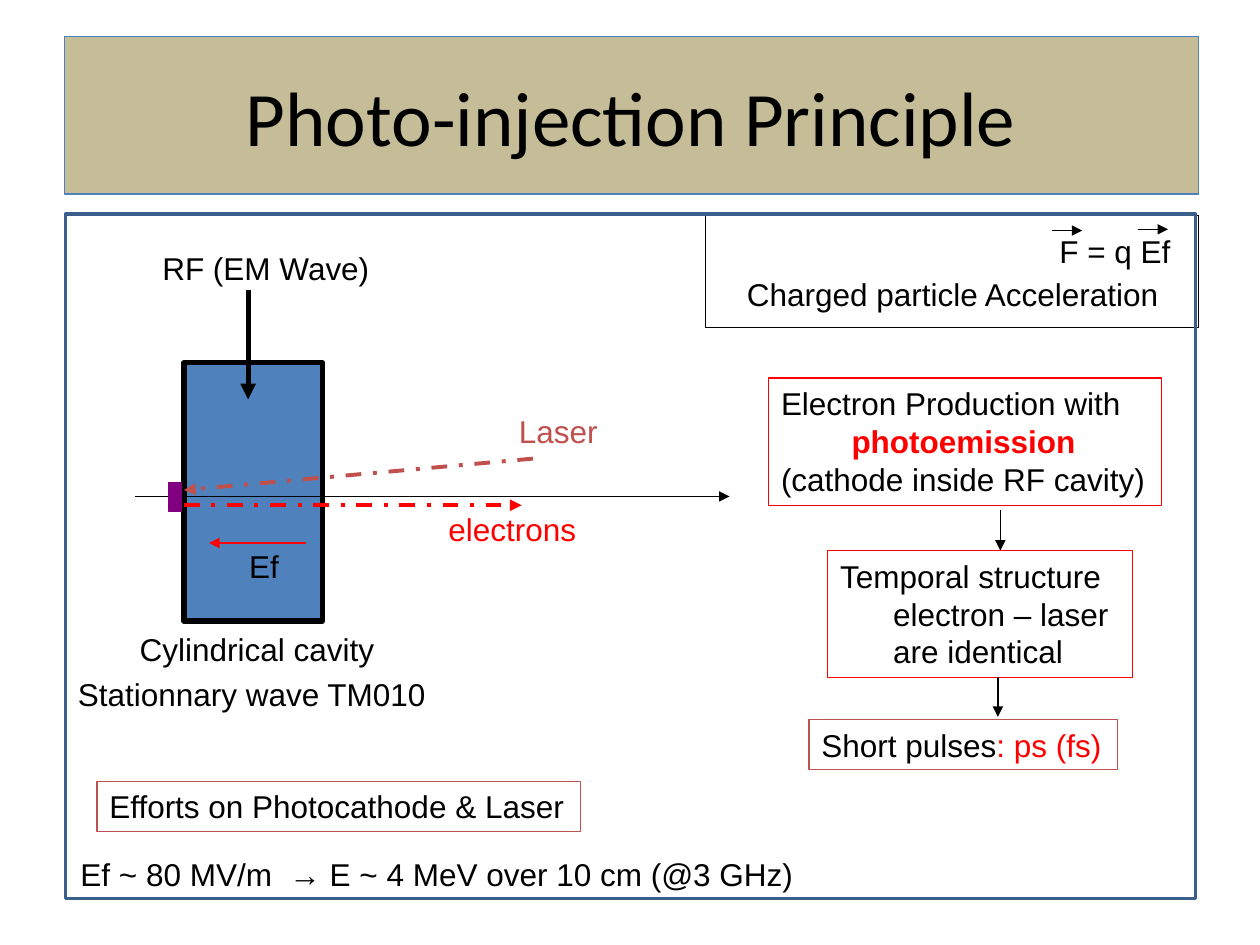
from pptx import Presentation
from pptx import util as u
from pptx.dml.color import RGBColor
from pptx.enum import dml, shapes, text
from pptx.oxml.ns import qn
from lxml import etree

BLACK, RED, BRICK, BLUE = "000000", "FF0000", "C0504D", "4F81BD"


def rgb(value):
    return RGBColor.from_string(value)


def style_shape(sp, fill, line, width):
    if fill:
        sp.fill.solid()
        sp.fill.fore_color.rgb = rgb(fill)
    else:
        sp.fill.background()
    sp.line.color.rgb = rgb(line)
    sp.line.width = u.Pt(width)


def add_box(s, x, y, w, h, line, fill=None, width=0.75):
    sp = s.shapes.add_shape(shapes.MSO_SHAPE.RECTANGLE, *map(u.Inches, (x, y, w, h)))
    sp.shadow.inherit = False
    style_shape(sp, fill, line, width)
    return sp


def write_lines(sp, lines):
    tf = sp.text_frame
    tf.word_wrap = False
    tf.vertical_anchor = text.MSO_ANCHOR.TOP
    for i, (indent, runs) in enumerate(lines):
        p = tf.paragraphs[0] if i == 0 else tf.add_paragraph()
        p.alignment = text.PP_ALIGN.LEFT
        if indent:
            p._p.get_or_add_pPr().set("marL", str(u.Inches(indent)))
        for words, color, bold in runs:
            r = p.add_run()
            r.text = words
            r.font.name = "Arial"
            r.font.size = u.Pt(18)
            r.font.bold = bold
            r.font.color.rgb = rgb(color)


def add_label(s, x, y, w, words, color=BLACK):
    sp = s.shapes.add_textbox(*map(u.Inches, (x, y, w, 0.4)))
    write_lines(sp, [(0, [(words, color, False)])])


def add_arrow(s, x1, y1, x2, y2, color=BLACK, width=0.75, dashed=False):
    c = s.shapes.add_connector(shapes.MSO_CONNECTOR.STRAIGHT, *map(u.Inches, (x1, y1, x2, y2)))
    c.line.color.rgb = rgb(color)
    c.line.width = u.Pt(width)
    if dashed:
        c.line.dash_style = dml.MSO_LINE.DASH_DOT
    etree.SubElement(c.line._get_or_add_ln(), qn("a:tailEnd"), type="triangle")
    etree.SubElement(c._element.spPr, qn("a:effectLst"))


def add_title(s, x, y, w, h):
    sp = s.shapes.title
    sp.left, sp.top, sp.width, sp.height = map(u.Inches, (x, y, w, h))
    style_shape(sp, "C4BD97", BLUE, 0.75)
    tf = sp.text_frame
    tf.text = "Photo-injection Principle"
    tf.vertical_anchor = text.MSO_ANCHOR.MIDDLE
    p = tf.paragraphs[0]
    p.alignment = text.PP_ALIGN.CENTER
    font = p.runs[0].font
    font.name, font.size = "Calibri", u.Pt(44)
    font.color.rgb = rgb(BLACK)


def add_force_panel(s, x, y, w, h):
    add_box(s, x, y, w, h, BLACK)
    add_label(s, x + 2.71, y + 0.08, 1.08, "F = q Ef")
    add_label(s, x + 0.23, y + 0.42, 3.5, "Charged particle Acceleration")
    for dx, dy in ((2.75, 0.12), (3.43, 0.11)):
        add_arrow(s, x + dx, y + dy, x + dx + 0.24, y + dy)


def add_cavity(s, x, y, w, h):
    add_box(s, x, y, w, h, BLACK, BLUE, 3)
    add_arrow(s, x - 0.39, y + 1.06, x + 4.33, y + 1.06)
    add_arrow(s, x + 0.97, y + 1.43, x + 0.2, y + 1.43, RED, 1.5)
    add_arrow(s, x + 0.51, y - 0.58, x + 0.51, y + 0.29, BLACK, 3)
    add_arrow(s, x + 2.77, y + 0.76, x, y + 1.01, BRICK, 2.25, True)
    add_arrow(s, x, y + 1.13, x + 2.68, y + 1.13, RED, 2.25, True)
    add_box(s, x - 0.12, y + 0.95, 0.1, 0.23, "800080", "800080")
    add_label(s, x + 0.42, y + 1.41, 0.44, "Ef")
    add_label(s, x - 0.27, y - 0.95, 1.86, "RF (EM Wave)")
    add_label(s, x + 2.56, y + 0.34, 0.83, "Laser", BRICK)
    add_label(s, x + 2, y + 1.12, 1.22, "electrons", RED)
    add_label(s, x - 0.45, y + h + 0.02, 2.08, "Cylindrical cavity")
    add_label(s, x - 0.94, y + h + 0.38, 3.06, "Stationnary wave TM010")


def add_emission_steps(s, x, y):
    steps = [
        (0, 0, 3.12, 1.01, RED, [
            (0, [("Electron Production with", BLACK, False)]),
            (0.56, [("photoemission", RED, True)]),
            (0, [("(cathode inside RF cavity)", BLACK, False)])]),
        (0.47, 1.37, 2.42, 1.01, RED, [
            (0, [("Temporal structure", BLACK, False)]),
            (0.42, [("electron – laser", BLACK, False)]),
            (0.42, [("are identical", BLACK, False)])]),
        (0.32, 2.71, 2.45, 0.4, BRICK, [
            (0, [("Short pulses", BLACK, False), (": ps (fs)", RED, False)])]),
    ]
    for dx, dy, w, h, line, lines in steps:
        write_lines(add_box(s, x + dx, y + dy, w, h, line), lines)
    for dx, dy in ((1.84, 1.05), (1.82, 2.37)):
        add_arrow(s, x + dx, y + dy, x + dx, y + dy + 0.32)


def add_summary(s, x, y):
    sp = add_box(s, x + 0.23, y, 3.84, 0.4, BRICK)
    write_lines(sp, [(0, [("Efforts on Photocathode & Laser", BLACK, False)])])
    add_label(s, x, y + 0.54, 5.91, "Ef ~ 80 MV/m  → E ~ 4 MeV over 10 cm (@3 GHz)")


def main():
    prs = Presentation()
    prs.slide_width, prs.slide_height = u.Inches(10), u.Inches(7.5)
    s = prs.slides.add_slide(prs.slide_layouts[5])
    add_title(s, 0.51, 0.29, 9, 1.25)
    add_emission_steps(s, 6.1, 3)
    add_cavity(s, 1.46, 2.88, 1.1, 2.05)
    add_force_panel(s, 5.6, 1.71, 3.91, 0.89)
    add_summary(s, 0.54, 6.2)
    add_box(s, 0.52, 1.7, 8.97, 5.43, "3A5F8C", width=2)
    prs.save("out.pptx")


if __name__ == "__main__":
    main()
